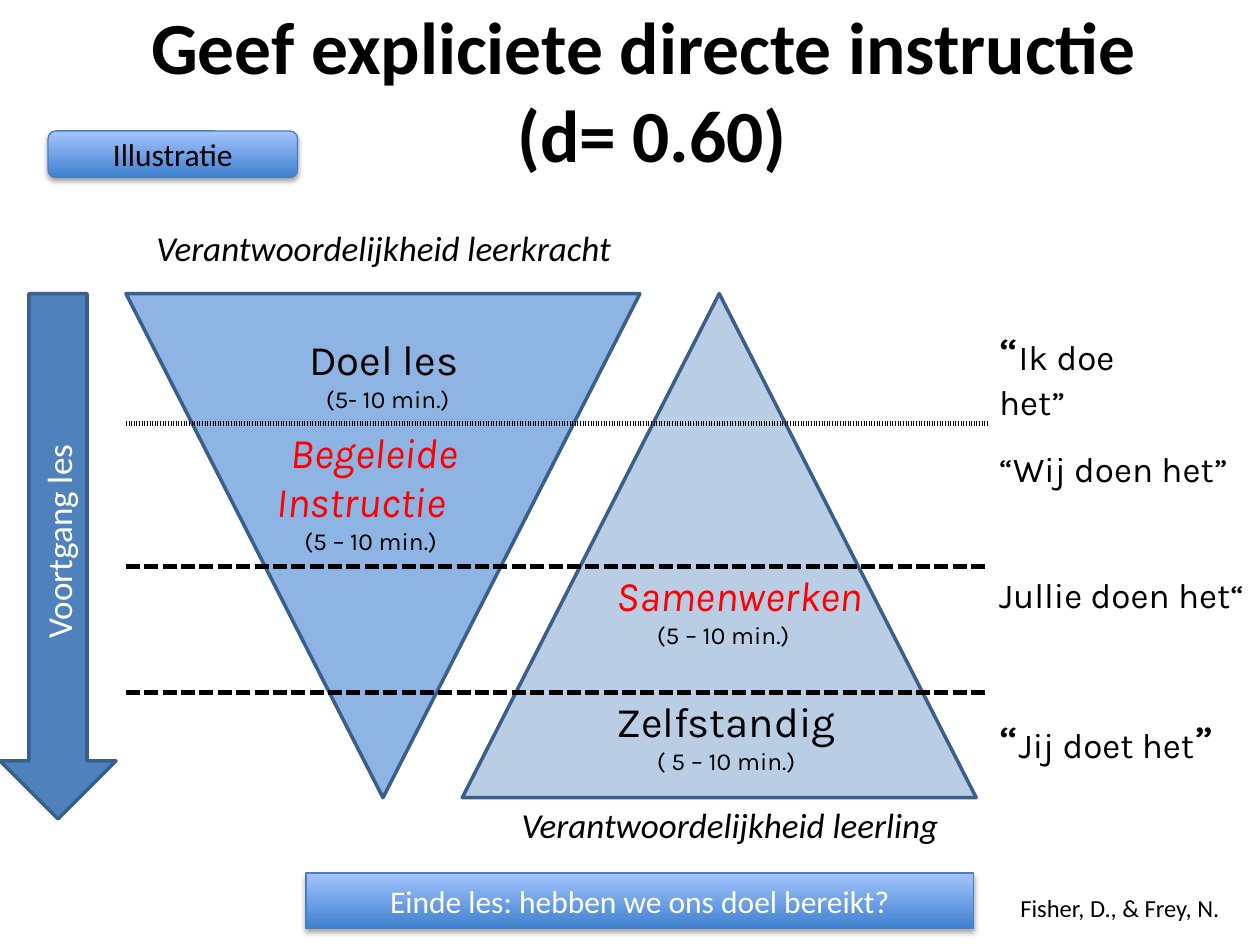
from lxml import etree
from pptx import Presentation
from pptx.dml.color import RGBColor
from pptx.enum.shapes import MSO_SHAPE
from pptx.enum.text import MSO_ANCHOR, PP_ALIGN
from pptx.oxml.ns import qn
from pptx.util import Cm, Pt

TRI, ARROW = MSO_SHAPE.ISOSCELES_TRIANGLE, MSO_SHAPE.DOWN_ARROW
RECT, ROUND = MSO_SHAPE.RECTANGLE, MSO_SHAPE.ROUNDED_RECTANGLE
LEFT, CENTER = PP_ALIGN.LEFT, PP_ALIGN.CENTER
MIDDLE = MSO_ANCHOR.MIDDLE

THEME = {
    "body": "Calibri", "grid": "Karla",
    "title": 42, "head": 24, "label": 20, "quote": 28, "bar": 18, "small": 14,
    "black": "000000", "white": "FFFFFF", "red": "FF0000",
    "edge": "3A5F8C", "rim": "4B7EBC", "arrow": "4F81BD",
    "down": "8EB4E3", "up": "B9CDE5", "deep": "3F80CE", "light": "A4C4FF",
}

# Content: boxes are left, top, width, height in cm
TITLE = "Geef expliciete directe instructie \v(d= 0.60)"
TITLE_BOX = (0.89, 0.43, 24.51, 2.74)
TRIANGLES = [((9.32, 5.92, 10.36, 10.16), "up", 0),
             ((2.54, 5.92, 10.36, 10.16), "down", 180)]
LABELS = [
    ("Fisher, D., & Frey, N.", (20.32, 17.88, 5.08, 0.84), "small", LEFT, False),
    ("Verantwoordelijkheid leerkracht", (2.34, 4.45, 10.8, 1.12), "label", CENTER, True),
    ("Verantwoordelijkheid leerling", (9.32, 16.08, 10.8, 1.12), "label", CENTER, True),
]
# Each phase: column, alignment, lines of (text, size, colour, left and right indent)
PHASES = [
    (0, CENTER, [("Doel les", "head", "black", 0.76, 0),
                 ("(5- 10 min.)", "small", "black", 0.92, 0)]),
    (0, CENTER, [("Begeleide", "head", "red", 0.38, 0),
                 ("Instructie", "head", "red", 0, 0.15),
                 ("(5 – 10 min.)", "small", "black", 0.24, 0)]),
    (1, LEFT, [("Samenwerken", "head", "red", 0, 0),
               ("(5 – 10 min.)", "small", "black", 0.82, 0)]),
    (1, LEFT, [("Zelfstandig", "head", "black", 0, 0),
               ("( 5 – 10 min.)", "small", "black", 0.82, 0)]),
]
GRID_BOX = (2.54, 5.92, 17.37, 10.57)
COLS, ROWS = (9.63, 7.74), (2.62, 2.87, 2.54, 2.54)
DASHES = (None, "dot", "dash", "sysDash", None)  # rules above, between, below rows
QUOTE_LEFT = 19.89
QUOTES = [  # top, width, runs
    (6.35, 4.29, [("“", "quote"), ("Ik doe het”", "label")]),
    (8.89, 5.51, [("“Wij doen het”", "label")]),
    (11.43, 5.51, [("Jullie doen het“", "label")]),
    (14.18, 5.51, [("“", "quote"), ("Jij doet het", "label"), ("”", "quote")]),
]
ARROW_TEXT, ARROW_BOX = "Voortgang les", (0, 5.92, 2.34, 10.59)
BARS = [("Einde les: hebben we ons doel bereikt?", RECT, (6.17, 17.6, 13.46, 1.12), "white"),
        ("Illustratie", ROUND, (0.97, 2.64, 5.03, 0.94), "black")]


def tint(name):
    return RGBColor.from_string(THEME[name])


def cms(box):
    return [Cm(n) for n in box]


def style(run, size, hue="black", face="body", bold=False, slant=False):
    font = run.font
    font.name, font.size = THEME[face], Pt(THEME[size])
    font.bold, font.italic = bold, slant
    font.color.rgb = tint(hue)


def write(shape, text, size, hue="black", align=CENTER, **look):
    frame = shape.text_frame
    frame.word_wrap = True
    frame.text = text
    for para in frame.paragraphs:
        para.alignment = align
        for run in para.runs:
            style(run, size, hue, **look)


def draw(kind, box, fill, edge="edge", width=2):
    shape = slide.shapes.add_shape(kind, *cms(box))
    shape.shadow.inherit = False
    shape.fill.solid()
    shape.fill.fore_color.rgb = tint(fill)
    shape.line.color.rgb = tint(edge)
    shape.line.width = Pt(width)
    shape.text_frame.vertical_anchor = MIDDLE
    return shape


def gloss(shape):
    """Give a bar its gradient and soft shadow."""
    shape.fill.gradient()
    shape.fill.gradient_angle = 90
    for stop, hue in zip(shape.fill.gradient_stops, ("deep", "light")):
        stop.color.rgb = tint(hue)
    effects = shape._element.spPr.find(qn("a:effectLst"))
    shade = etree.SubElement(effects, qn("a:outerShdw"), blurRad=str(Pt(3.1)),
                             dist=str(Pt(1.8)), dir="5400000", rotWithShape="0")
    color = etree.SubElement(shade, qn("a:srgbClr"), val=THEME["black"])
    etree.SubElement(color, qn("a:alpha"), val="35000")


def rule(cell, above, below):
    """Draw the dashed rules above and below a cell."""
    props = cell._tc.get_or_add_tcPr()
    sides = (("lnL", None), ("lnR", None), ("lnT", above), ("lnB", below))
    for spot, (side, dash) in enumerate(sides):
        line = etree.Element(qn("a:" + side), w=str(Pt(3)))
        props.insert(spot, line)
        if dash is None:
            etree.SubElement(line, qn("a:noFill"))
            continue
        fill = etree.SubElement(line, qn("a:solidFill"))
        etree.SubElement(fill, qn("a:srgbClr"), val=THEME["black"])
        etree.SubElement(line, qn("a:prstDash"), val=dash)


deck = Presentation()
deck.slide_width, deck.slide_height = Cm(25.4), Cm(19.05)
slide = deck.slides.add_slide(deck.slide_layouts[5])

# Title
title = slide.shapes.title
title.left, title.top, title.width, title.height = cms(TITLE_BOX)
title.text_frame.vertical_anchor = MIDDLE
write(title, TITLE, "title", bold=True)

# Triangles and labels
for box, fill, turn in TRIANGLES:
    draw(TRI, box, fill).rotation = turn
for text, box, size, align, slant in LABELS:
    write(slide.shapes.add_textbox(*cms(box)), text, size, align=align, slant=slant)

# Lesson phases
grid = slide.shapes.add_table(len(ROWS), len(COLS), *cms(GRID_BOX)).table
grid.first_row = grid.horz_banding = False
for col, width in zip(grid.columns, COLS):
    col.width = Cm(width)
for i, (height, (spot, align, lines)) in enumerate(zip(ROWS, PHASES)):
    grid.rows[i].height = Cm(height)
    for cell in grid.rows[i].cells:
        cell.fill.background()
        rule(cell, DASHES[i], DASHES[i + 1])
    cell = grid.cell(i, spot)
    cell.text_frame.text = "\n".join(line[0] for line in lines)
    for para, (_, size, hue, left, right) in zip(cell.text_frame.paragraphs, lines):
        para.alignment = align
        props = para._p.get_or_add_pPr()
        props.set("marL", str(Cm(left)))
        props.set("marR", str(Cm(right)))
        style(para.runs[0], size, hue, "grid", slant=hue == "red")
grid.cell(0, 0).margin_top = Cm(0.88)

# Quotes beside the phases
for top, width, runs in QUOTES:
    height = 1.45 if len(runs) > 1 else 1.12
    frame = slide.shapes.add_textbox(*cms((QUOTE_LEFT, top, width, height))).text_frame
    frame.word_wrap = True
    for text, size in runs:
        run = frame.paragraphs[0].add_run()
        run.text = text
        style(run, size, face="grid")

# Progress arrow
arrow = draw(ARROW, ARROW_BOX, "arrow")
write(arrow, ARROW_TEXT, "label", "white")
arrow.text_frame._txBody.bodyPr.set("vert", "vert270")

# Glossy bars
for text, kind, box, hue in BARS:
    bar = draw(kind, box, "deep", "rim", 0.75)
    gloss(bar)
    write(bar, text, "bar", hue)

deck.save("out.pptx")
